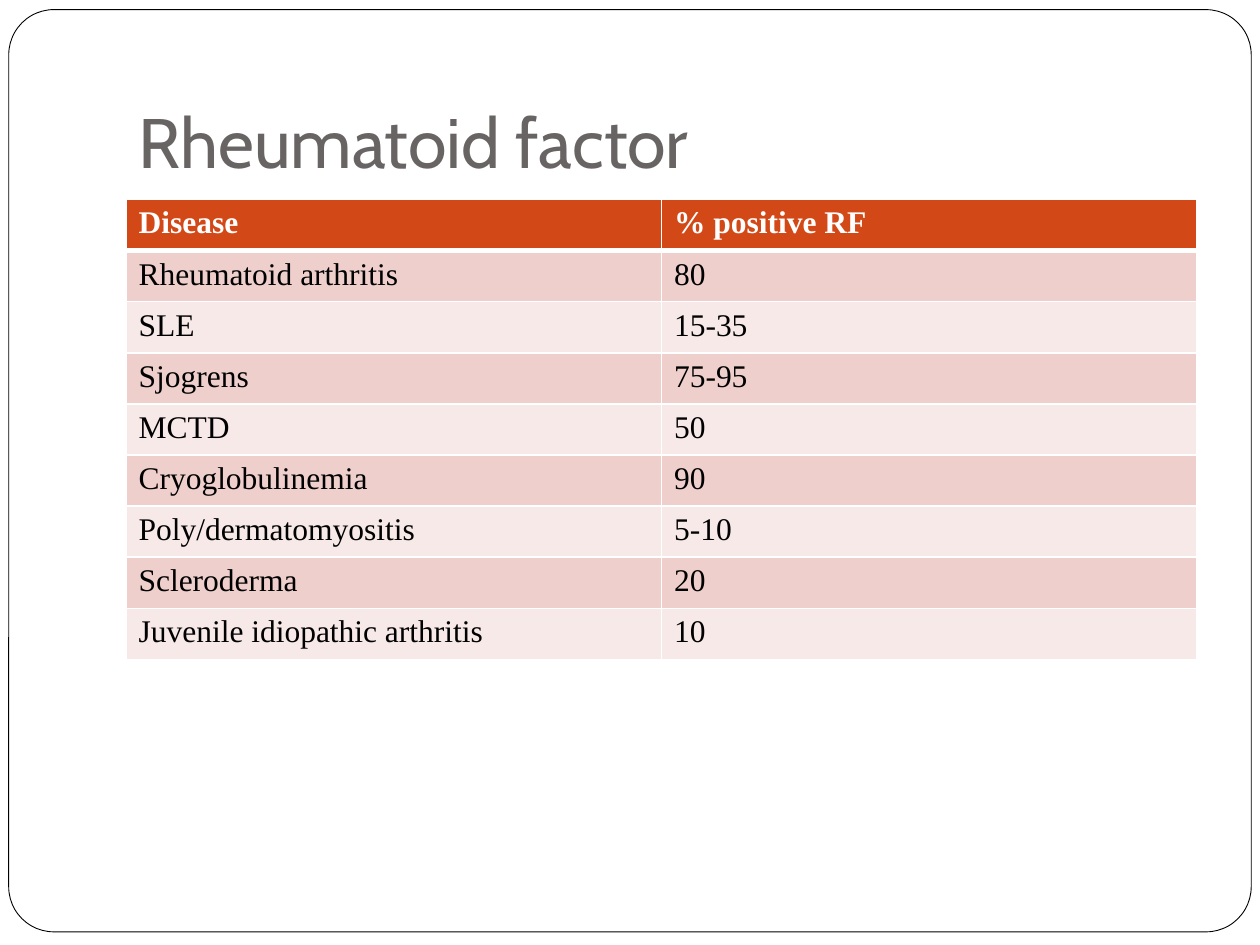
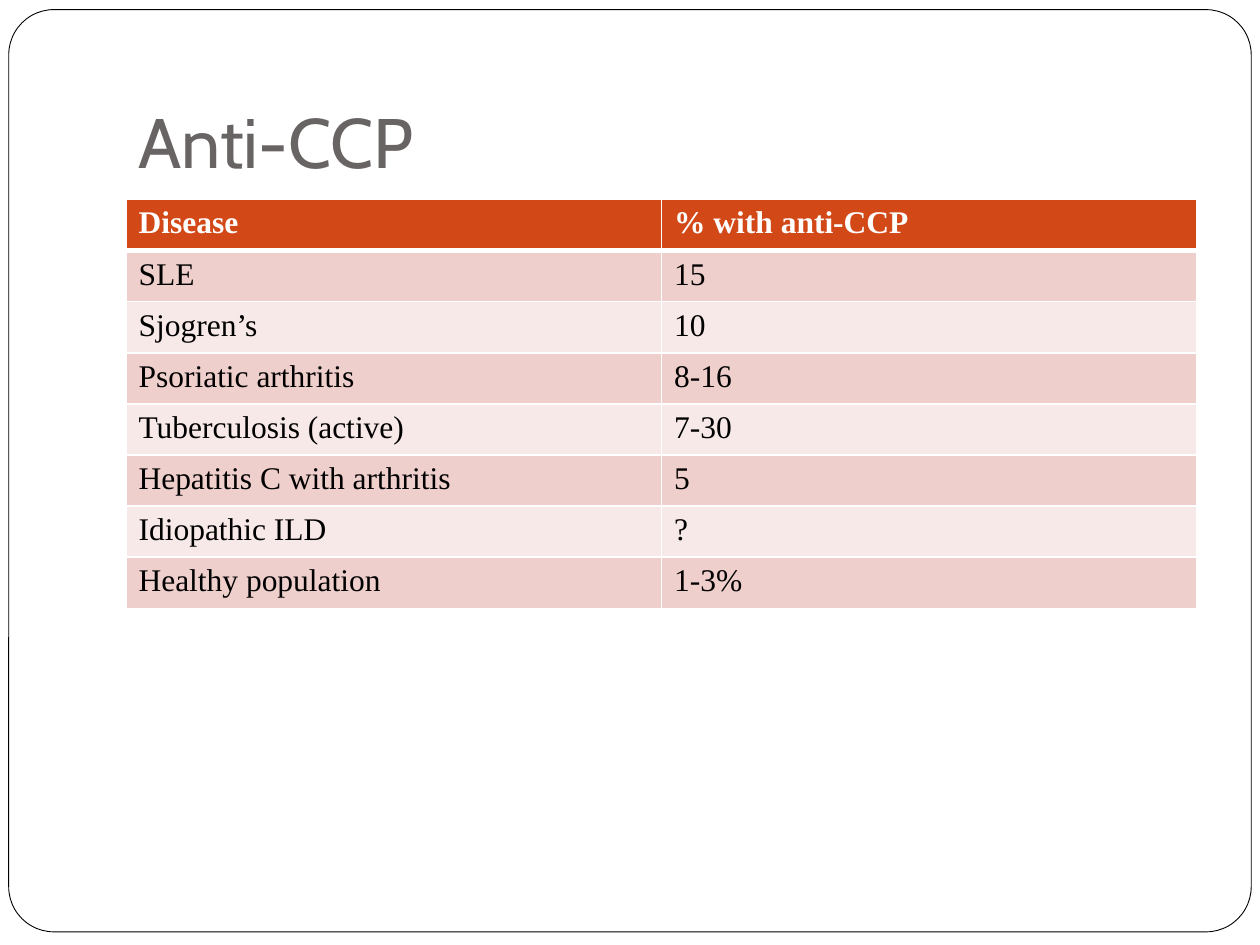
from lxml import etree
from pptx import Presentation
from pptx.dml.color import RGBColor
from pptx.enum import shapes, text
from pptx.oxml import ns
from pptx.util import Pt

TABLES = [
    ("Rheumatoid factor", [
        ("Disease", "% positive RF"),
        ("Rheumatoid arthritis", "80"),
        ("SLE", "15-35"),
        ("Sjogrens", "75-95"),
        ("MCTD", "50"),
        ("Cryoglobulinemia", "90"),
        ("Poly/dermatomyositis", "5-10"),
        ("Scleroderma", "20"),
        ("Juvenile idiopathic arthritis", "10"),
    ]),
    ("Anti-CCP", [
        ("Disease", "% with anti-CCP"),
        ("SLE", "15"),
        ("Sjogren’s", "10"),
        ("Psoriatic arthritis", "8-16"),
        ("Tuberculosis (active)", "7-30"),
        ("Hepatitis C with arthritis", "5"),
        ("Idiopathic ILD", "?"),
        ("Healthy population", "1-3%"),
    ]),
]

WHITE, BLACK, GREY = "FFFFFF", "000000", "696464"
HEADER, BANDS = "D34817", ("F7E9E8", "EFCFCC")
LEFT, WIDTH = 72, 612
TABLE_TOP, ROW_HEIGHT = 114, 29.2

TITLE_PLACE = {"left": Pt(LEFT), "top": Pt(21.6), "width": Pt(WIDTH), "height": Pt(90)}
TITLE_FRAME = {
    "vertical_anchor": text.MSO_ANCHOR.BOTTOM, "word_wrap": True,
    "auto_size": text.MSO_AUTO_SIZE.NONE,
    "margin_left": Pt(7.2), "margin_right": Pt(7.2),
    "margin_top": Pt(3.6), "margin_bottom": Pt(7.2),
}
TITLE_FONT = {"name": "Cabin", "size": Pt(40), "bold": False}
CELL_FONT = {"name": "Times New Roman", "size": Pt(18)}


def color(value):
    return RGBColor.from_string(value)


def apply(target, values):
    for name, value in values.items():
        setattr(target, name, value)


def paint(fill, value):
    fill.solid()
    fill.fore_color.rgb = color(value)


def write(frame, words, font, ink):
    para = frame.paragraphs[0]
    para.alignment = text.PP_ALIGN.LEFT
    span = para.add_run()
    span.text = words
    apply(span.font, font)
    span.font.color.rgb = color(ink)


def add_borders(cell, widths):
    properties = cell._tc.get_or_add_tcPr()
    for position, (side, width) in enumerate(widths.items()):
        line = etree.Element(ns.qn(f"a:ln{side}"), w=str(int(Pt(width))))
        fill = etree.SubElement(line, ns.qn("a:solidFill"))
        etree.SubElement(fill, ns.qn("a:srgbClr"), val=WHITE)
        properties.insert(position, line)


def add_title(page, words):
    title = page.shapes.title
    apply(title, TITLE_PLACE)
    apply(title.text_frame, TITLE_FRAME)
    write(title.text_frame, words, TITLE_FONT, GREY)


def add_frame(page):
    frame = page.shapes.add_shape(
        shapes.MSO_SHAPE.ROUNDED_RECTANGLE, Pt(5), Pt(5.5), Pt(710), Pt(527))
    frame.adjustments[0] = 0.049
    frame.shadow.inherit = False
    paint(frame.fill, WHITE)
    frame.line.color.rgb = color(BLACK)
    frame.line.width = Pt(0.5)
    page.shapes.title.element.addprevious(frame.element)


def add_table(page, rows):
    columns = len(rows[0])
    table = page.shapes.add_table(
        len(rows), columns, Pt(LEFT), Pt(TABLE_TOP),
        Pt(WIDTH), Pt(ROW_HEIGHT * len(rows))).table
    for column in table.columns:
        column.width = Pt(WIDTH / columns)
    for index, row in enumerate(rows):
        table.rows[index].height = Pt(ROW_HEIGHT)
        is_header = index == 0
        borders = {"L": 1, "R": 1, "T": 1, "B": 3} if is_header else {"L": 1, "R": 1, "B": 1}
        for column, words in enumerate(row):
            cell = table.cell(index, column)
            paint(cell.fill, HEADER if is_header else BANDS[index % 2])
            add_borders(cell, borders)
            write(cell.text_frame, words, {**CELL_FONT, "bold": is_header},
                  WHITE if is_header else BLACK)


def main():
    deck = Presentation()
    deck.slide_width, deck.slide_height = Pt(720), Pt(540)
    for heading, rows in TABLES:
        page = deck.slides.add_slide(deck.slide_layouts[5])
        paint(page.background.fill, WHITE)
        add_title(page, heading)
        add_frame(page)
        add_table(page, rows)
    deck.save("out.pptx")


if __name__ == "__main__":
    main()
